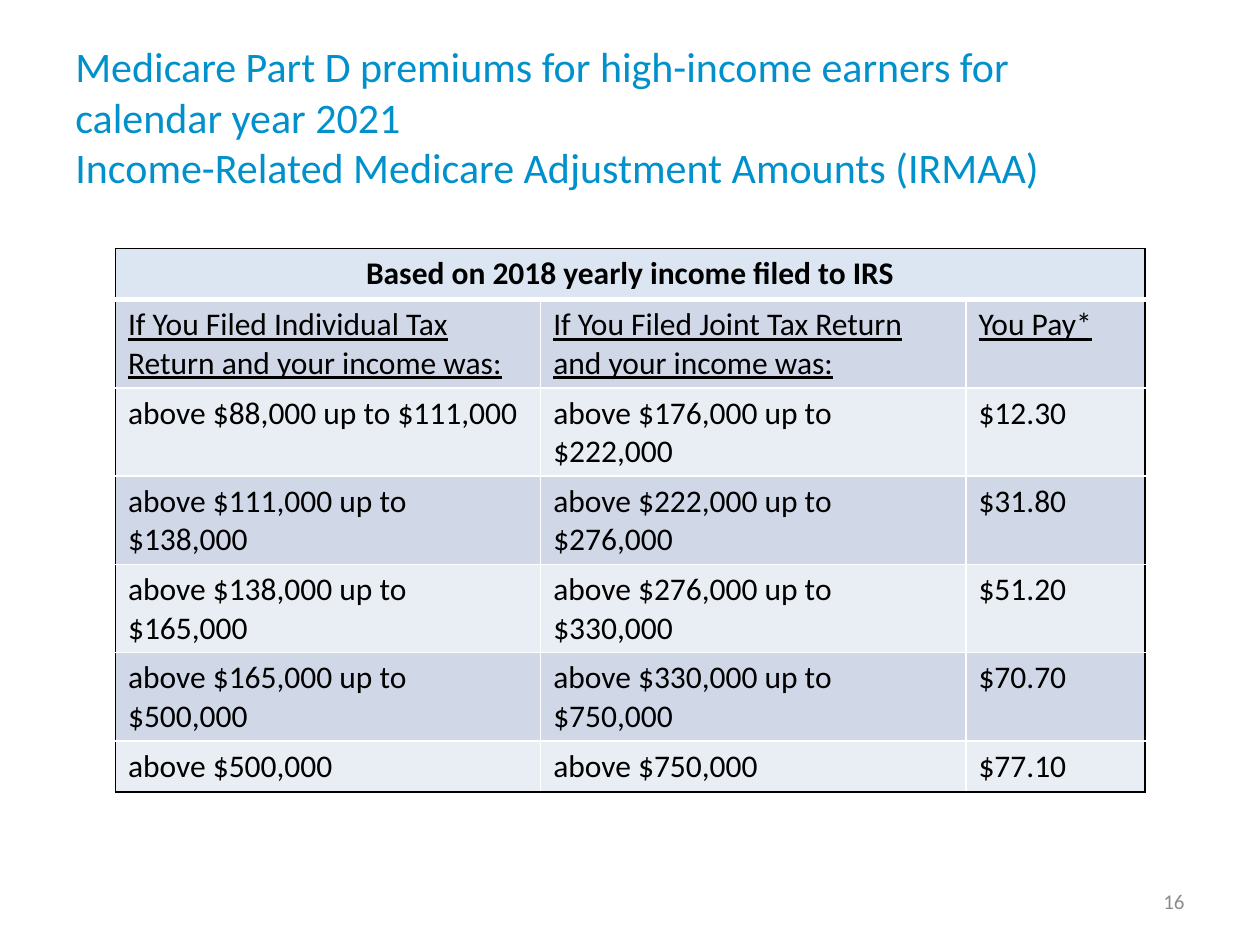
from lxml import etree
from pptx import Presentation
from pptx.dml.color import RGBColor
from pptx.enum.text import MSO_ANCHOR, PP_ALIGN
from pptx.oxml.ns import qn
from pptx.util import Pt

MIDDLE = MSO_ANCHOR.MIDDLE
LEFT, CENTER, RIGHT = PP_ALIGN.LEFT, PP_ALIGN.CENTER, PP_ALIGN.RIGHT
FONT = "Calibri"
COLORS = {
    "title": "0091CC",
    "number": "8C8C8C",
    "text": "000000",
    "frame": "000000",
    "grid": "FFFFFF",
    "heading": "DCE6F2",
    "dark_band": "D0D8E8",
    "light_band": "E9EDF4",
}
TITLE_LINES = [
    "Medicare Part D premiums for high-income earners for ",
    "calendar year 2021",
    "Income-Related Medicare Adjustment Amounts (IRMAA)",
]
TABLE_HEADING = "Based on 2018 yearly income filed to IRS"
COLUMN_HEADINGS = [
    "If You Filed Individual Tax Return and your income was:",
    "If You Filed Joint Tax Return and your income was:",
    "You Pay*",
]
PREMIUMS = [
    ("above $88,000 up to $111,000", "above $176,000 up to $222,000", "$12.30"),
    ("above $111,000 up to $138,000", "above $222,000 up to $276,000", "$31.80"),
    ("above $138,000 up to $165,000", "above $276,000 up to $330,000", "$51.20"),
    ("above $165,000 up to $500,000", "above $330,000 up to $750,000", "$70.70"),
    ("above $500,000", "above $750,000", "$77.10"),
]
COLUMN_WIDTHS = [243, 243, 102.25]
ROW_HEIGHT = 29.2


def add_run(paragraph, text, size, color, bold=False, underline=False):
    run = paragraph.add_run()
    run.text = text
    font = run.font
    font.name = FONT
    font.size = Pt(size)
    font.bold = bold
    font.underline = underline
    font.color.rgb = RGBColor.from_string(COLORS[color])


def add_text(slide, box, lines, size, color, alignment):
    shape = slide.shapes.add_textbox(*map(Pt, box))
    frame = shape.text_frame
    frame.word_wrap = True
    frame.vertical_anchor = MIDDLE
    paragraph = frame.paragraphs[0]
    paragraph.alignment = alignment
    for index, line in enumerate(lines):
        if index:
            paragraph.add_line_break()
        add_run(paragraph, line, size, color)


def set_border(cell, side, color, width):
    properties = cell._tc.get_or_add_tcPr()
    line = etree.SubElement(properties, qn(f"a:ln{side}"), w=str(Pt(width)))
    fill = etree.SubElement(line, qn("a:solidFill"))
    etree.SubElement(fill, qn("a:srgbClr"), val=COLORS[color])


def style_cell(cell, row, column, last_row, last_column):
    edges = {
        "L": column == 0,
        "R": column == last_column or row == 0,
        "T": row == 0,
        "B": row == last_row,
    }
    for side, outer in edges.items():
        heading_rule = (row, side) in ((0, "B"), (1, "T"))
        set_border(cell, side, "frame" if outer else "grid", 3 if heading_rule else 1)
    band = "heading" if row == 0 else "dark_band" if row % 2 else "light_band"
    cell.fill.solid()
    cell.fill.fore_color.rgb = RGBColor.from_string(COLORS[band])


def add_premium_table(slide, left, top):
    rows = [(TABLE_HEADING, "", ""), COLUMN_HEADINGS, *PREMIUMS]
    table = slide.shapes.add_table(
        len(rows), len(COLUMN_WIDTHS), Pt(left), Pt(top),
        Pt(sum(COLUMN_WIDTHS)), Pt(ROW_HEIGHT * len(rows)),
    ).table
    for column, width in zip(table.columns, COLUMN_WIDTHS):
        column.width = Pt(width)
    for row_index, texts in enumerate(rows):
        table.rows[row_index].height = Pt(ROW_HEIGHT)
        for column_index, text in enumerate(texts):
            cell = table.cell(row_index, column_index)
            style_cell(cell, row_index, column_index, len(rows) - 1, len(texts) - 1)
            if text:
                paragraph = cell.text_frame.paragraphs[0]
                paragraph.alignment = CENTER if row_index == 0 else LEFT
                add_run(paragraph, text, 18, "text", row_index == 0, row_index == 1)
    table.cell(0, 0).merge(table.cell(0, len(COLUMN_WIDTHS) - 1))


def main():
    presentation = Presentation()
    presentation.slide_width = Pt(720)
    presentation.slide_height = Pt(540)
    slide = presentation.slides.add_slide(presentation.slide_layouts[6])
    add_text(slide, (36, 21.6, 648, 90), TITLE_LINES, 24, "title", LEFT)
    add_premium_table(slide, 66, 142)
    add_text(slide, (516, 500.5, 168, 28.75), ["16"], 12, "number", RIGHT)
    presentation.save("out.pptx")


if __name__ == "__main__":
    main()
